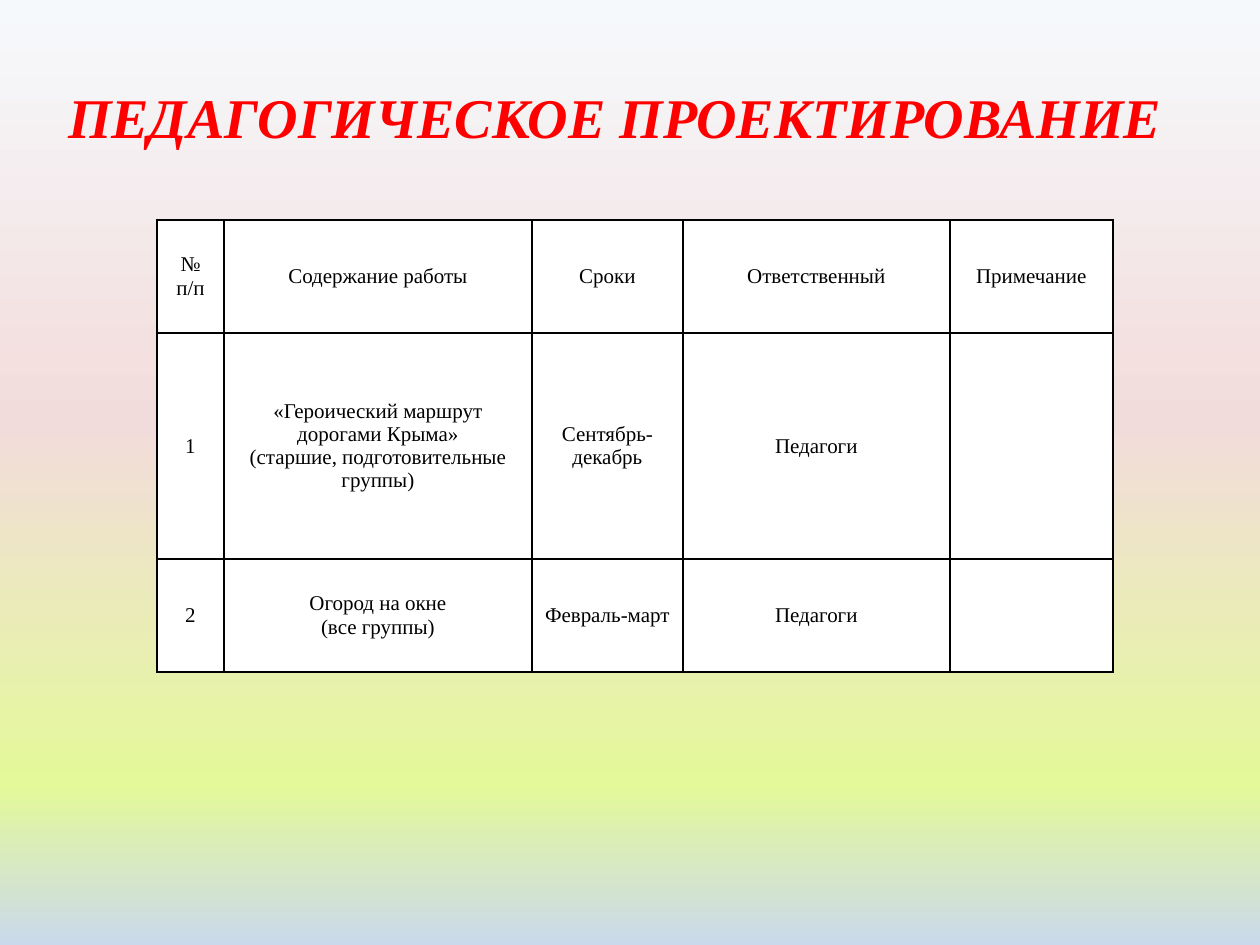
from lxml.etree import SubElement
from pptx import Presentation
from pptx.dml.color import RGBColor
from pptx.enum.text import MSO_ANCHOR, PP_ALIGN
from pptx.oxml.ns import qn
from pptx.util import Emu, Pt

TITLE = "ПЕДАГОГИЧЕСКОЕ ПРОЕКТИРОВАНИЕ"
# One string per cell; a list holds one string per paragraph
ROWS = [
    ["№ п/п", "Содержание работы", "Сроки", "Ответственный", "Примечание"],
    ["1", ["«Героический маршрут дорогами Крыма»",
           "(старшие, подготовительные группы)"],
     "Сентябрь-декабрь", "Педагоги", ""],
    ["2", ["Огород на окне", "(все группы)"], "Февраль-март", "Педагоги", ""],
]
COLUMN_WIDTHS = [67, 308, 151, 267, 163]
ROW_HEIGHTS = [113, 226, 113]
TABLE_LEFT, TABLE_TOP = 157, 220
GRADIENT = [(0, "F6F9FC"), (45, "F2DCDB"), (83, "E4F999"), (100, "CAD9EB")]
FONT = "Times New Roman"
BLACK, WHITE, RED = "000000", "FFFFFF", "FF0000"


def px(count):
    return Emu(count * 914400 // 126)


def color(value):
    return RGBColor.from_string(value)


def add_span(para, text, size, ink):
    span = para.add_run()
    span.text = text
    span.font.name = FONT
    span.font.size = Pt(size)
    span.font.color.rgb = color(ink)
    return span


def paint_background(page):
    fill = page.background.fill
    fill.gradient()
    fill.gradient_angle = 270
    stops = page.element.find(".//" + qn("a:gsLst"))
    for stop in list(stops):
        stops.remove(stop)
    for percent, value in GRADIENT:
        stop = SubElement(stops, qn("a:gs"), pos=str(percent * 1000))
        SubElement(stop, qn("a:srgbClr"), val=value)


def add_borders(cell):
    properties = cell._tc.get_or_add_tcPr()
    for side in ("lnL", "lnR", "lnT", "lnB"):
        line = SubElement(properties, qn("a:" + side), w=str(Pt(1)))
        solid = SubElement(line, qn("a:solidFill"))
        SubElement(solid, qn("a:srgbClr"), val=BLACK)


def add_title(page):
    title = page.shapes.title
    title.left, title.top, title.width, title.height = map(px, (42, 83, 1197, 74))
    frame = title.text_frame
    frame.word_wrap = True
    frame.vertical_anchor = MSO_ANCHOR.MIDDLE
    frame.margin_left = px(26)
    para = frame.paragraphs[0]
    para.alignment = PP_ALIGN.LEFT
    para.line_spacing = 0.9
    span = add_span(para, TITLE, 32, RED)
    span.font.bold = True
    span.font.italic = True


def fill_cell(cell, content):
    add_borders(cell)
    cell.fill.solid()
    cell.fill.fore_color.rgb = color(WHITE)
    cell.vertical_anchor = MSO_ANCHOR.MIDDLE
    cell.margin_left = cell.margin_right = px(9)
    cell.margin_top = cell.margin_bottom = 0
    lines = content if isinstance(content, list) else [content]
    frame = cell.text_frame
    for index, text in enumerate(lines):
        para = frame.add_paragraph() if index else frame.paragraphs[0]
        para.alignment = PP_ALIGN.CENTER
        if text:
            add_span(para, text, 12, BLACK)


def add_plan(page):
    table = page.shapes.add_table(
        len(ROWS), len(COLUMN_WIDTHS), px(TABLE_LEFT), px(TABLE_TOP),
        px(sum(COLUMN_WIDTHS)), px(sum(ROW_HEIGHTS))).table
    table.first_row = False
    table.horz_banding = False
    for column, width in zip(table.columns, COLUMN_WIDTHS):
        column.width = px(width)
    for row, height, contents in zip(table.rows, ROW_HEIGHTS, ROWS):
        row.height = px(height)
        for cell, content in zip(row.cells, contents):
            fill_cell(cell, content)


def main():
    deck = Presentation()
    deck.slide_width, deck.slide_height = px(1260), px(945)
    page = deck.slides.add_slide(deck.slide_layouts[5])
    paint_background(page)
    add_title(page)
    add_plan(page)
    deck.save("out.pptx")


if __name__ == "__main__":
    main()
